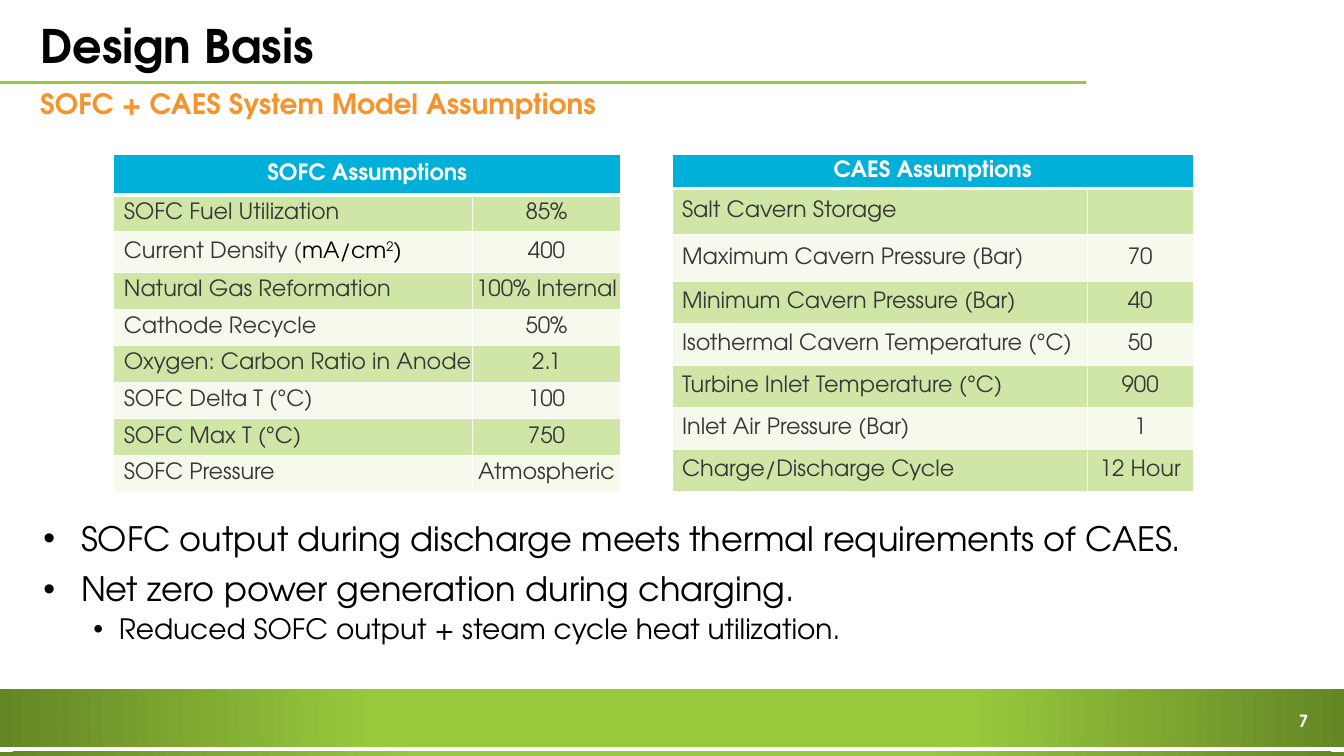
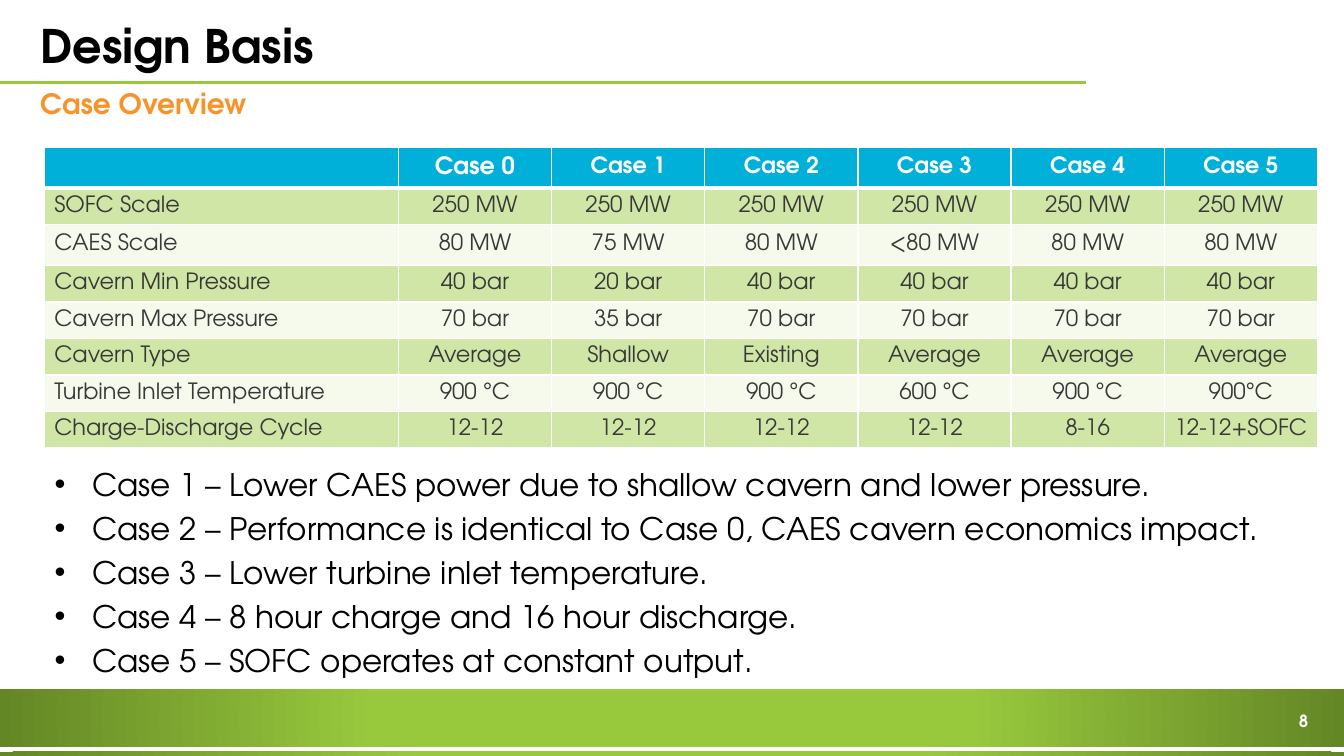
from lxml import etree
from pptx import Presentation
from pptx import util as u
from pptx.dml.color import RGBColor
from pptx.enum import shapes, text
from pptx.oxml import parse_xml
from pptx.oxml.ns import nsdecls, qn

FONT = "TeX Gyre Adventor"
C = {
    "black": "000000", "white": "FFFFFF", "text": "383838", "orange": "F7932B",
    "green": "98C93D", "dark": "648725", "head": "00B0D9", "odd": "D0E6A6", "even": "F5FAED",
}
TITLE = {"size": u.Pt(33), "bold": True}
SUBTITLE = {"size": u.Pt(20), "bold": True}
NUMBER = {"size": u.Pt(12), "bold": True}
HEAD = {"size": u.Pt(16), "bold": True}
CELL = {"size": u.Pt(16), "bold": False}

SLIDES = [
    {
        "subtitle": "SOFC + CAES System Model Assumptions",
        "tables": [
            {
                "left": 2.87, "top": 3.89, "cols": [9.04, 3.73],
                "heights": [1.02, 0.92, 1.04] + [0.92] * 6,
                "rows": [
                    ["SOFC Assumptions"],
                    ["SOFC Fuel Utilization", "85%"],
                    [[("Current Density (", "text", 0), ("mA/cm", "black", 0),
                      ("2", "black", 30000), (")", "black", 0)], "400"],
                    ["Natural Gas Reformation", "100% Internal"],
                    ["Cathode Recycle", "50%"],
                    ["Oxygen: Carbon Ratio in Anode", "2.1"],
                    ["SOFC Delta T (°C)", "100"],
                    ["SOFC Max T (°C)", "750"],
                    ["SOFC Pressure", "Atmospheric"],
                ],
            },
            {
                "left": 16.94, "top": 3.89, "cols": [10.46, 2.67],
                "heights": [0.86] + [1.17] * 2 + [1.06] * 5,
                "rows": [
                    ["CAES Assumptions"],
                    ["Salt Cavern Storage", ""],
                    ["Maximum Cavern Pressure (Bar)", "70"],
                    ["Minimum Cavern Pressure (Bar)", "40"],
                    ["Isothermal Cavern Temperature (°C)", "50"],
                    ["Turbine Inlet Temperature (°C)", "900"],
                    ["Inlet Air Pressure (Bar)", "1"],
                    ["Charge/Discharge Cycle", "12 Hour"],
                ],
            },
        ],
        "body": (0.84, 13.03, 32.18, 4.01), "size": 24, "spacing": 0.9,
        "bullets": [
            (0, "SOFC output during discharge meets thermal requirements of CAES."),
            (0, "Net zero power generation during charging."),
            (1, "Reduced SOFC output + steam cycle heat utilization."),
        ],
    },
    {
        "subtitle": "Case Overview",
        "tables": [
            {
                "left": 1.12, "top": 3.71, "cols": [8.92] + [3.86] * 6,
                "heights": [1.02, 0.92, 1.04] + [0.92] * 5,
                "rows": [
                    [""] + [f"Case {n}" for n in range(6)],
                    ["SOFC Scale"] + ["250 MW"] * 6,
                    ["CAES Scale", "80 MW", "75 MW", "80 MW", "<80 MW", "80 MW", "80 MW"],
                    ["Cavern Min Pressure", "40 bar", "20 bar"] + ["40 bar"] * 4,
                    ["Cavern Max Pressure", "70 bar", "35 bar"] + ["70 bar"] * 4,
                    ["Cavern Type", "Average", "Shallow", "Existing"] + ["Average"] * 3,
                    ["Turbine Inlet Temperature"] + ["900 °C"] * 3 + ["600 °C", "900 °C", "900°C"],
                    ["Charge-Discharge Cycle"] + ["12-12"] * 4 + ["8-16", "12-12+SOFC"],
                ],
            },
        ],
        "body": (1.12, 11.79, 32.18, 5.66), "size": 22.2, "spacing": 0.8,
        "bullets": [
            (0, "Case 1 – Lower CAES power due to shallow cavern and lower pressure."),
            (0, "Case 2 – Performance is identical to Case 0, CAES cavern economics impact."),
            (0, "Case 3 – Lower turbine inlet temperature."),
            (0, "Case 4 – 8 hour charge and 16 hour discharge."),
            (0, "Case 5 – SOFC operates at constant output."),
        ],
    },
]


def add_run(p, value, colour, fmt):
    r = p.add_run()
    r.text = value
    r.font.name = FONT
    r.font.color.rgb = RGBColor.from_string(C[colour])
    for key, val in fmt.items():
        setattr(r.font, key, val)
    return r


def place(sp, left, top, width, height):
    for key, val in zip(("left", "top", "width", "height"), (left, top, width, height)):
        setattr(sp, key, u.Cm(val))


prs = Presentation()
prs.slide_width, prs.slide_height = u.Cm(33.87), u.Cm(19.05)
prs.element.set("firstSlideNum", "7")
layout = prs.slide_layouts[3]
title, subtitle = layout.placeholders[0], layout.placeholders[1]
place(title, 0.76, 0.38, 26.64, 1.68)
place(subtitle, 0.76, 2.16, 32.18, 1.04)
slides = [prs.slides.add_slide(layout) for _ in SLIDES]

rule = slides[0].shapes.add_connector(
    shapes.MSO_CONNECTOR.STRAIGHT, 0, u.Cm(2.08), u.Cm(27.38), u.Cm(2.08))
rule.line.color.rgb = RGBColor.from_string(C["green"])
rule.line.width = u.Pt(1.75)
etree.SubElement(rule.element.spPr, qn("a:effectLst"))
layout.shapes.element.append(rule.element)

for top, height, stop in ((17.37, 1.45, 44), (18.95, 0.13, 37)):
    band = slides[0].shapes.add_shape(
        shapes.MSO_SHAPE.RECTANGLE, 0, u.Cm(top), prs.slide_width, u.Cm(height))
    band.shadow.inherit = False
    band.line.fill.background()
    band.element.spPr.find(qn("a:prstGeom")).addnext(parse_xml(
        f'<a:gradFill {nsdecls("a")} rotWithShape="1"><a:gsLst>'
        f'<a:gs pos="{stop * 1000}"><a:srgbClr val="{C["green"]}"/></a:gs>'
        f'<a:gs pos="100000"><a:srgbClr val="{C["dark"]}"/></a:gs></a:gsLst>'
        '<a:path path="circle"><a:fillToRect l="50000" t="50000" r="50000" b="50000"/></a:path>'
        '</a:gradFill>'))
    layout.shapes.element.append(band.element)

for number, (s, data) in enumerate(zip(slides, SLIDES), 7):
    title, subtitle, body = s.placeholders
    for sp, value, colour, fmt, anchor in (
        (title, "Design Basis", "black", TITLE, text.MSO_ANCHOR.MIDDLE),
        (subtitle, data["subtitle"], "orange", SUBTITLE, text.MSO_ANCHOR.TOP),
    ):
        tf = sp.text_frame
        tf.auto_size, tf.vertical_anchor = text.MSO_AUTO_SIZE.NONE, anchor
        p = tf.paragraphs[0]
        p.alignment, p.line_spacing, p.space_before = text.PP_ALIGN.LEFT, 0.9, u.Pt(0)
        pPr = p._p.get_or_add_pPr()
        pPr.set("marL", "0")
        pPr.set("indent", "0")
        etree.SubElement(pPr, qn("a:buNone"))
        add_run(p, value, colour, fmt)

    for table in data["tables"]:
        rows, cols, heights = table["rows"], table["cols"], table["heights"]
        tbl = s.shapes.add_table(
            len(rows), len(cols), u.Cm(table["left"]), u.Cm(table["top"]),
            u.Cm(sum(cols)), u.Cm(sum(heights))).table
        for col, width in zip(tbl.columns, cols):
            col.width = u.Cm(width)
        for i, (row, height) in enumerate(zip(rows, heights)):
            tbl.rows[i].height = u.Cm(height)
            if len(row) == 1:
                tbl.cell(i, 0).merge(tbl.cell(i, len(cols) - 1))
            for j, cell in enumerate(tbl.rows[i].cells):
                label = i > 0 and j == 0
                tcPr = cell._tc.get_or_add_tcPr()
                for side in "LRTB":
                    thick = (i, side) in ((0, "B"), (1, "T"))
                    tcPr.append(parse_xml(
                        f'<a:ln{side} {nsdecls("a")} w="{u.Pt(3 if thick else 1)}"><a:solidFill>'
                        f'<a:srgbClr val="{C["white"]}"/></a:solidFill></a:ln{side}>'))
                cell.fill.solid()
                fill = "head" if i == 0 else "odd" if i % 2 else "even"
                cell.fill.fore_color.rgb = RGBColor.from_string(C[fill])
                cell.margin_left = u.Cm(0.25 if label else 0)
                cell.margin_right = cell.margin_top = cell.margin_bottom = 0
                cell.vertical_anchor = text.MSO_ANCHOR.MIDDLE
                value = row[j] if j < len(row) else ""
                if not value:
                    continue
                p = cell.text_frame.paragraphs[0]
                p.alignment = text.PP_ALIGN.LEFT if label else text.PP_ALIGN.CENTER
                if isinstance(value, str):
                    value = [(value, "text" if i else "white", 0)]
                for part, colour, baseline in value:
                    r = add_run(p, part, colour, CELL if i else HEAD)
                    if baseline:
                        r.font._element.set("baseline", str(baseline))
                    if part == "Case 0":
                        r.font.size = u.Pt(17)

    place(body, *data["body"])
    tf = body.text_frame
    tf.auto_size = text.MSO_AUTO_SIZE.NONE
    for i, (level, value) in enumerate(data["bullets"]):
        p = tf.add_paragraph() if i else tf.paragraphs[0]
        p.level, p.line_spacing = level, data["spacing"]
        p.space_before = u.Pt((5 if level else 10) if i else 0)
        pPr = p._p.get_or_add_pPr()
        pPr.set("marL", str(u.Cm(1.9 if level else 0.95)))
        pPr.set("indent", str(u.Cm(-0.64 if level else -0.95)))
        etree.SubElement(pPr, qn("a:buFont")).set("typeface", "Arial")
        etree.SubElement(pPr, qn("a:buChar")).set("char", "•")
        add_run(p, value, "black", {"size": u.Pt(20 if level else data["size"])})

    box = s.shapes.add_textbox(u.Cm(32.13), u.Cm(17.65), u.Cm(1.09), u.Cm(1.02))
    tf = box.text_frame
    tf.word_wrap, tf.vertical_anchor = True, text.MSO_ANCHOR.MIDDLE
    p = tf.paragraphs[0]
    p.alignment = text.PP_ALIGN.RIGHT
    r = add_run(p, str(number), "white", NUMBER)
    r._r.tag = qn("a:fld")
    r._r.set("id", "{B6F15528-21DE-4FAA-801E-634DDDAF4B2B}")
    r._r.set("type", "slidenum")

prs.save("out.pptx")
